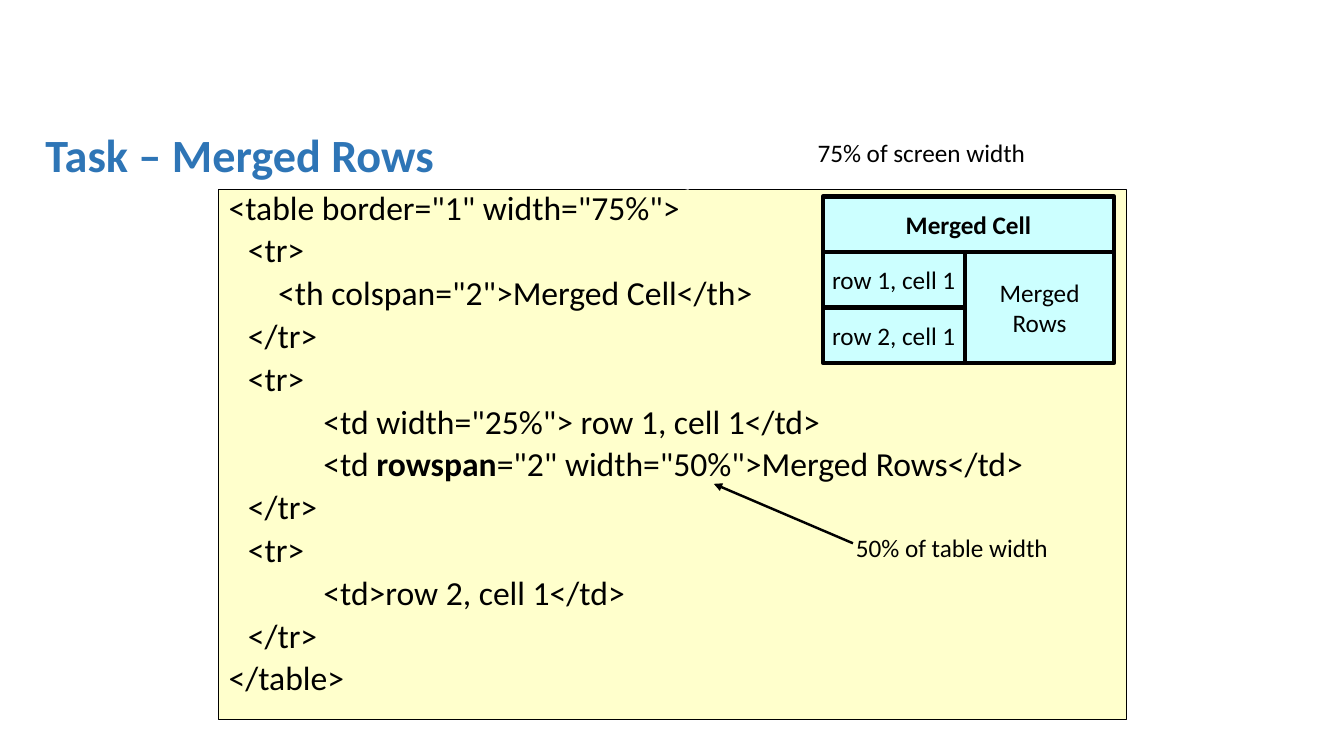
from lxml import etree
from pptx import Presentation
from pptx.dml.color import RGBColor
from pptx.enum import shapes, text
from pptx.oxml.ns import qn
from pptx.util import Inches, Pt

FONT = "Calibri"
BLACK, WHITE, BLUE = "000000", "FFFFFF", "2E75B6"
CREAM, AQUA = "FFFFCC", "CCFFFF"

TITLE = "Task – Merged Rows"
INDENTS = [0, 0.19, 0.94]
# (indent level, [(text, bold), ...])
CODE = [
    (0, [('<table border="1" width="75%">', False)]),
    (1, [("<tr>", False)]),
    (1, [('    <th colspan="2">Merged Cell</th>', False)]),
    (1, [("</tr>", False)]),
    (1, [("<tr>", False)]),
    (2, [('<td width="25%"> row 1, cell 1</td>', False)]),
    (2, [("<td ", False), ("rowspan", True),
         ('="2" width="50%">Merged Rows</td>', False)]),
    (1, [("</tr>", False)]),
    (1, [("<tr>", False)]),
    (2, [("<td>row 2, cell 1</td>", False)]),
    (1, [("</tr>", False)]),
    (0, [("</table>", False)]),
]
# The sample table: text, column, row, columns spanned, rows spanned, bold, wrap
CELLS = [
    ("row 1, cell 1", 0, 1, 1, 1, False, False),
    ("Merged Rows", 1, 1, 1, 2, False, True),
    ("row 2, cell 1", 0, 2, 1, 1, False, False),
    ("Merged Cell", 0, 0, 2, 1, True, False),
]
COLUMN_EDGES = [8.16, 9.57, 11.05]
ROW_TOP, ROW_HEIGHT = 1.95, 0.55
LABELS = [
    ("50% of table width", 8.39, 5.23, 2.13, 0.4),
    ("75% of screen width", 8.01, 1.31, 2.29, 0.4),
]
# start, end, colour, width in points
ARROWS = [
    ((7.93, 1.62), (6.74, 1.86), WHITE, 0.75),
    ((8.46, 5.39), (7.08, 4.8), BLACK, 1.75),
]


def color(value):
    return RGBColor.from_string(value)


def add_span(para, words, size, bold=False, ink=BLACK):
    span = para.add_run()
    span.text = words
    span.font.name = FONT
    span.font.size = Pt(size)
    span.font.bold = bold
    span.font.color.rgb = color(ink)


def add_box(page, place, fill, line_width):
    box = page.shapes.add_shape(shapes.MSO_SHAPE.RECTANGLE, *map(Inches, place))
    box.shadow.inherit = False
    box.fill.solid()
    box.fill.fore_color.rgb = color(fill)
    box.line.color.rgb = color(BLACK)
    box.line.width = Pt(line_width)
    return box


def add_title(page):
    title = page.shapes.title
    title.left, title.top, title.width, title.height = map(
        Inches, (0.35, 1.07, 12.68, 0.99))
    frame = title.text_frame
    frame.word_wrap = True
    frame.auto_size = text.MSO_AUTO_SIZE.NONE
    frame.vertical_anchor = text.MSO_ANCHOR.MIDDLE
    para = frame.paragraphs[0]
    para.alignment = text.PP_ALIGN.LEFT
    para.line_spacing = 0.9
    add_span(para, TITLE, 33, True, BLUE)


def add_code(page):
    frame = add_box(page, (2.17, 1.88, 9, 5.26), CREAM, 0.75).text_frame
    frame.word_wrap = True
    frame.vertical_anchor = text.MSO_ANCHOR.TOP
    for number, (level, spans) in enumerate(CODE):
        para = frame.add_paragraph() if number else frame.paragraphs[0]
        para.alignment = text.PP_ALIGN.LEFT
        para.line_spacing = 0.8
        para.space_before = Pt(7.5 if number else 0)
        para._p.get_or_add_pPr().set("marL", str(Inches(INDENTS[level])))
        for words, bold in spans:
            add_span(para, words, 24, bold)


def add_cell(page, words, column, row, columns, rows, bold, wrap):
    left = COLUMN_EDGES[column]
    place = (left, ROW_TOP + row * ROW_HEIGHT,
             COLUMN_EDGES[column + columns] - left, rows * ROW_HEIGHT)
    frame = add_box(page, place, AQUA, 3).text_frame
    frame.word_wrap = wrap
    frame.vertical_anchor = text.MSO_ANCHOR.MIDDLE
    para = frame.paragraphs[0]
    para.alignment = text.PP_ALIGN.CENTER
    add_span(para, words, 18, bold)


def add_label(page, words, *place):
    frame = page.shapes.add_textbox(*map(Inches, place)).text_frame
    frame.word_wrap = False
    frame.auto_size = text.MSO_AUTO_SIZE.SHAPE_TO_FIT_TEXT
    add_span(frame.paragraphs[0], words, 18)


def add_arrow(page, start, end, ink, width):
    arrow = page.shapes.add_connector(
        shapes.MSO_CONNECTOR.STRAIGHT, *map(Inches, start + end))
    arrow.line.color.rgb = color(ink)
    arrow.line.width = Pt(width)
    etree.SubElement(arrow.line._get_or_add_ln(), qn("a:tailEnd"), type="triangle")
    etree.SubElement(arrow._element.spPr, qn("a:effectLst"))


def main():
    deck = Presentation()
    deck.slide_width, deck.slide_height = Inches(13.33), Inches(7.5)
    page = deck.slides.add_slide(deck.slide_layouts[5])
    add_title(page)
    add_code(page)
    for cell in CELLS:
        add_cell(page, *cell)
    for label in LABELS:
        add_label(page, *label)
    for arrow in ARROWS:
        add_arrow(page, *arrow)
    deck.save("out.pptx")


if __name__ == "__main__":
    main()
